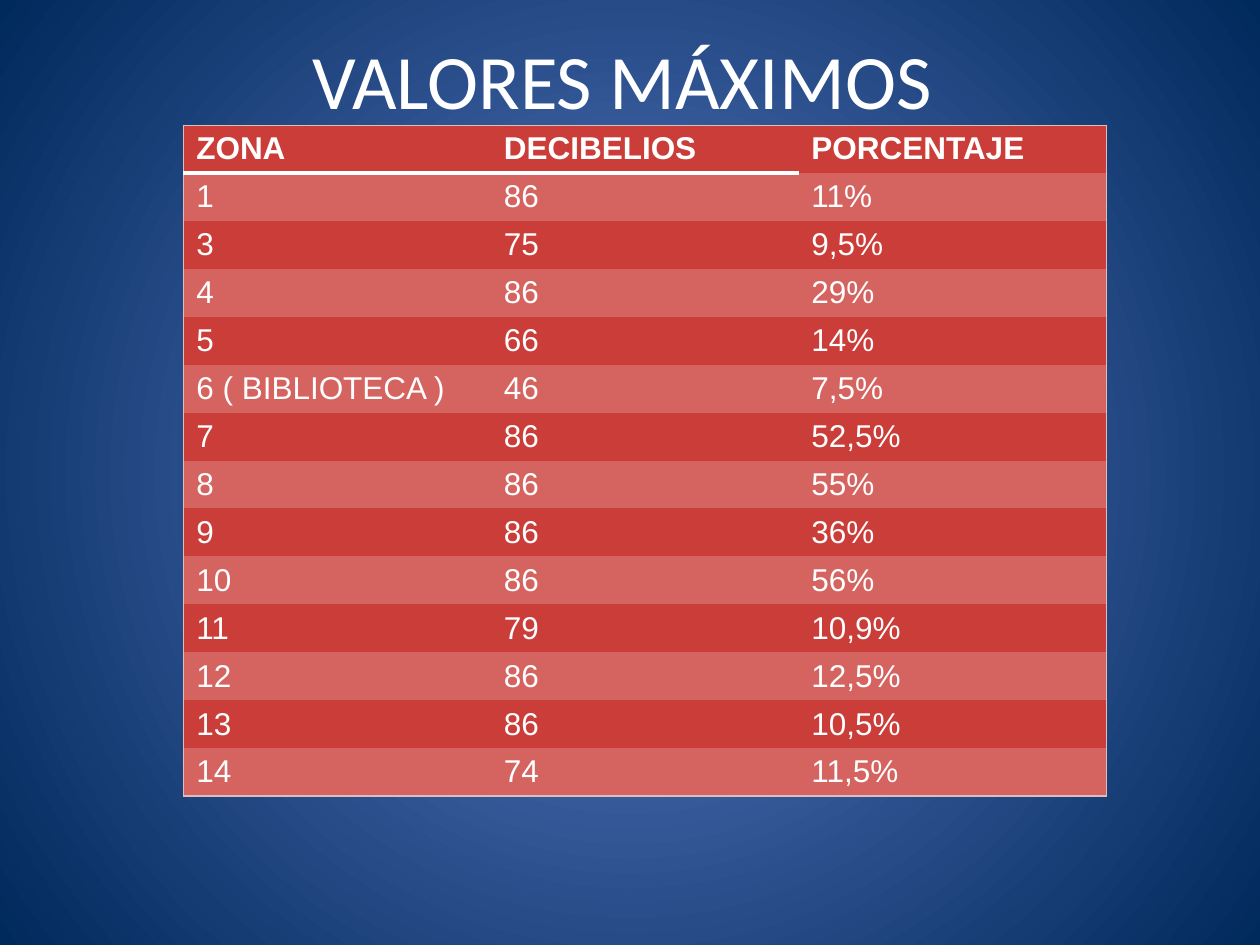
from pptx import Presentation, util as u
from pptx.dml.color import RGBColor
from pptx.enum import text
from pptx.oxml import parse_xml
from pptx.oxml import ns

WHITE = RGBColor(0xFF, 0xFF, 0xFF)
RED = RGBColor(0xCB, 0x3D, 0x39)
LIGHT_RED = RGBColor(0xD5, 0x64, 0x61)
PINK = RGBColor(0xDE, 0xBD, 0xBD)
BLUE = RGBColor(0x5E, 0x7C, 0xC5)
NAVY = RGBColor(0x00, 0x29, 0x5C)
PLAIN_TABLE = "{2D5ABB26-0587-4C30-8999-92F81FD0307C}"

HEADERS = ["ZONA", "DECIBELIOS", "PORCENTAJE"]
READINGS = [
    ("1", "86", "11%"),
    ("3", "75", "9,5%"),
    ("4", "86", "29%"),
    ("5", "66", "14%"),
    ("6 ( BIBLIOTECA )", "46", "7,5%"),
    ("7", "86", "52,5%"),
    ("8", "86", "55%"),
    ("9", "86", "36%"),
    ("10", "86", "56%"),
    ("11", "79", "10,9%"),
    ("12", "86", "12,5%"),
    ("13", "86", "10,5%"),
    ("14", "74", "11,5%"),
]


class SlideBuilder:
    title_font, title_size = "Calibri", 44
    body_font, body_size = "Arial", 18

    def __init__(self, slide):
        self.slide = slide

    def background(self, inner, outer):
        fill = self.slide.background.fill
        fill.gradient()
        for stop, color in zip(fill.gradient_stops, (inner, outer)):
            stop.color.rgb = color
        # Turn the linear gradient into a circular one
        linear = self.slide.element.find(".//" + ns.qn("a:lin"))
        circle = parse_xml(
            f'<a:path {ns.nsdecls("a")} path="circle">'
            '<a:fillToRect l="50000" t="50000" r="50000" b="50000"/></a:path>')
        linear.getparent().replace(linear, circle)

    def run(self, paragraph, words, font, size, bold=False):
        run = paragraph.add_run()
        run.text = words
        run.font.name, run.font.size, run.font.bold = font, u.Pt(size), bold
        run.font.color.rgb = WHITE

    def title(self, words, left, top, width, height):
        shape = self.slide.shapes.add_textbox(
            u.Pt(left), u.Pt(top), u.Pt(width), u.Pt(height))
        frame = shape.text_frame
        frame.word_wrap = True
        frame.vertical_anchor = text.MSO_ANCHOR.MIDDLE
        paragraph = frame.paragraphs[0]
        paragraph.alignment = text.PP_ALIGN.CENTER
        self.run(paragraph, words, self.title_font, self.title_size)

    def border(self, cell, side, color, width):
        cell._tc.get_or_add_tcPr().append(parse_xml(
            f'<a:ln{side} {ns.nsdecls("a")} w="{u.Pt(width)}"><a:solidFill>'
            f'<a:srgbClr val="{color}"/></a:solidFill></a:ln{side}>'))

    def table(self, rows, left, top, column_width, row_height):
        last_row, last_column = len(rows) - 1, len(rows[0]) - 1
        frame = self.slide.shapes.add_table(
            len(rows), len(rows[0]), u.Pt(left), u.Pt(top),
            u.Pt(column_width * len(rows[0])), u.Pt(row_height * len(rows)))
        table = frame.table
        table._tbl.tblPr.find(ns.qn("a:tableStyleId")).text = PLAIN_TABLE
        for column in table.columns:
            column.width = u.Pt(column_width)
        for r, row in enumerate(rows):
            table.rows[r].height = u.Pt(row_height)
            for c, words in enumerate(row):
                cell = table.cell(r, c)
                # A small bottom margin keeps the rows at their set height
                cell.margin_top, cell.margin_bottom = u.Pt(3.6), u.Pt(1.5)
                # Outer frame, in the order the schema asks for
                edges = {"L": c == 0, "R": c == last_column,
                         "T": r == 0, "B": r == last_row}
                for side, outer in edges.items():
                    if outer:
                        self.border(cell, side, PINK, 0.75)
                # The header rule stops before the last column
                if r == 0 and c < last_column:
                    self.border(cell, "B", WHITE, 3)
                cell.fill.solid()
                cell.fill.fore_color.rgb = LIGHT_RED if r % 2 else RED
                self.run(cell.text_frame.paragraphs[0], words,
                         self.body_font, self.body_size, bold=r == 0)


def main():
    presentation = Presentation()
    presentation.slide_width, presentation.slide_height = u.Pt(720), u.Pt(540)
    slide = presentation.slides.add_slide(presentation.slide_layouts[6])
    builder = SlideBuilder(slide)

    # Backdrop and heading
    builder.background(BLUE, NAVY)
    builder.title("VALORES MÁXIMOS ", 36.5, 0, 648, 90)

    # Readings by zone
    builder.table([HEADERS, *READINGS], 105, 71.5, 175.75, 27.4)

    presentation.save("out.pptx")


if __name__ == "__main__":
    main()
